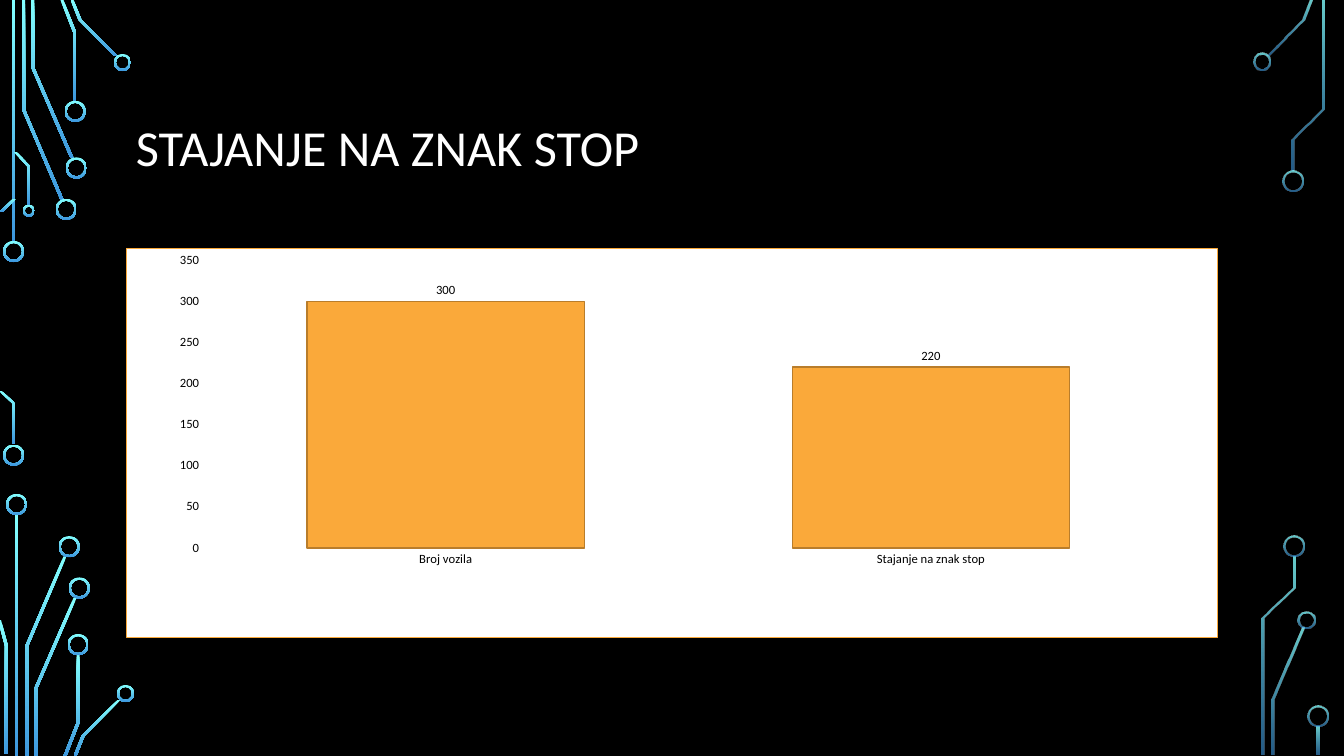
from math import hypot

from lxml.etree import SubElement
from pptx import Presentation
from pptx.chart.data import CategoryChartData
from pptx.dml.color import RGBColor
from pptx.enum.chart import XL_CHART_TYPE, XL_LABEL_POSITION, XL_TICK_MARK
from pptx.enum.shapes import MSO_SHAPE
from pptx.enum.text import MSO_ANCHOR, PP_ALIGN
from pptx.oxml import parse_xml
from pptx.oxml.ns import nsdecls, qn
from pptx.util import Inches, Pt

BLACK = RGBColor(0x00, 0x00, 0x00)
WHITE = RGBColor(0xFF, 0xFF, 0xFF)
CYAN = RGBColor(0x82, 0xFF, 0xFF)
BLUE = RGBColor(0x3D, 0x97, 0xDE)
ORANGE = RGBColor(0xFA, 0xA9, 0x3A)
BROWN = RGBColor(0xB9, 0x7D, 0x2B)
FONT = "Calibri"
SLIDE_HEIGHT = 7.5
TRACE_WIDTH = 0.03
RING_THICKNESS = 0.02
BIG, MEDIUM, SMALL, NO_RING = 0.21, 0.17, 0.12, 0

# Each trace is the diameter of its end ring and the points of its left edge.
TOP_LEFT_TRACES = [
    (BIG, [(0.12, 0), (0.12, 2.39)]),
    (BIG, [(0.22, 0), (0.22, 1.09), (0.6, 1.98)]),
    (BIG, [(0.31, 0), (0.31, 0.67), (0.7, 1.57)]),
    (BIG, [(0.6, 0), (0.73, 0.33), (0.73, 1)]),
    (MEDIUM, [(0.7, 0), (0.78, 0.2), (1.14, 0.56)]),
]
BOTTOM_LEFT_TRACES = [
    (diameter, [(x + 0.03, SLIDE_HEIGHT - y) for x, y in points])
    for diameter, points in TOP_LEFT_TRACES
]
LEFT_EDGE_TRACES = [
    (NO_RING, [(0, 2.1), (0.13, 1.97)]),
    (BIG, [(-0.01, 3.88), (0.12, 4), (0.12, 4.41)]),
    (SMALL, [(0.14, 1.51), (0.27, 1.65), (0.27, 2.03)]),
    (NO_RING, [(-0.02, 6.15), (0.05, 6.41), (0.05, 7.48)]),
]
RIGHT_TRACES = [
    (MEDIUM, [(12.99, 0), (12.91, 0.2), (12.56, 0.55)]),
    (BIG, [(13.11, 0), (13.11, 1.08), (12.81, 1.38), (12.81, 1.69)]),
    (MEDIUM, [(12.61, 7.49), (12.61, 6.94), (12.91, 6.23)]),
    (BIG, [(12.51, 7.49), (12.51, 6.13), (12.82, 5.83), (12.82, 5.52)]),
    (BIG, [(13.06, 7.49), (13.06, 7.21)]),
]
LEFT_TRACES = TOP_LEFT_TRACES + BOTTOM_LEFT_TRACES + LEFT_EDGE_TRACES


def paint_circuit(shape, opacities):
    """Fill with the cyan to blue gradient; opacities are top and bottom percent."""
    shape.shadow.inherit = False
    shape.line.fill.background()
    shape.fill.gradient()
    shape.fill.gradient_angle = 270
    for stop, color in zip(shape.fill.gradient_stops, (CYAN, BLUE)):
        stop.color.rgb = color
    for color_element, opacity in zip(shape._element.spPr.iter(qn("a:srgbClr")), opacities):
        if opacity < 100:
            SubElement(color_element, qn("a:alpha"), val=str(opacity * 1000))


def style_font(font, size, color):
    font.name = FONT
    font.size = Pt(size)
    font.color.rgb = color


presentation = Presentation()
presentation.slide_width = Inches(13.33)
presentation.slide_height = Inches(SLIDE_HEIGHT)
slide = presentation.slides.add_slide(presentation.slide_layouts[6])
slide.background.fill.solid()
slide.background.fill.fore_color.rgb = BLACK

for traces, opacities in ((LEFT_TRACES, (100, 100)), (RIGHT_TRACES, (80, 60))):
    for diameter, left_edge in traces:
        right_edge = [(x + TRACE_WIDTH, y) for x, y in reversed(left_edge)]
        outline = [(Inches(x), Inches(y)) for x, y in left_edge + right_edge]
        builder = slide.shapes.build_freeform(*outline[0])
        builder.add_line_segments(outline[1:], close=True)
        paint_circuit(builder.convert_to_shape(), opacities)
        if diameter == NO_RING:
            continue

        # The ring continues the last segment of its trace.
        (previous_x, previous_y), (end_x, end_y) = left_edge[-2:]
        run, rise = end_x - previous_x, end_y - previous_y
        radius = diameter / 2
        reach = radius / hypot(run, rise)
        left = end_x + TRACE_WIDTH / 2 + run * reach - radius
        top = end_y + rise * reach - radius
        ring = slide.shapes.add_shape(
            MSO_SHAPE.DONUT, Inches(left), Inches(top), Inches(diameter), Inches(diameter))
        ring.adjustments[0] = RING_THICKNESS / diameter
        paint_circuit(ring, opacities)

title = slide.shapes.add_textbox(Inches(1.25), Inches(0.68), Inches(10.83), Inches(1.62))
title.text_frame.word_wrap = True
title.text_frame.vertical_anchor = MSO_ANCHOR.MIDDLE
title.text_frame.text = "STAJANJE NA ZNAK STOP"
paragraph = title.text_frame.paragraphs[0]
paragraph.alignment = PP_ALIGN.LEFT
paragraph.line_spacing = 0.9
style_font(paragraph.runs[0].font, 36, WHITE)

chart_data = CategoryChartData()
chart_data.categories = ["Broj vozila", "Stajanje na znak stop"]
chart_data.add_series("Series 1", (300, 220))
chart = slide.shapes.add_chart(
    XL_CHART_TYPE.COLUMN_CLUSTERED,
    Inches(1.25), Inches(2.46), Inches(10.83), Inches(3.87), chart_data).chart
chart.has_title = False
chart.has_legend = False
style_font(chart.font, 10, BLACK)

for axis in (chart.category_axis, chart.value_axis):
    axis.major_tick_mark = XL_TICK_MARK.NONE
    axis.minor_tick_mark = XL_TICK_MARK.NONE
    axis.has_major_gridlines = False
    style_font(axis.tick_labels.font, 9, BLACK)
chart.category_axis.format.line.color.rgb = WHITE
chart.category_axis.format.line.width = Pt(0.75)
chart.value_axis.format.line.fill.background()
chart.value_axis.minimum_scale = 0
chart.value_axis.maximum_scale = 350
chart.value_axis.major_unit = 50

plot = chart.plots[0]
plot.gap_width = 75
plot.vary_by_categories = False
plot.has_data_labels = True
labels = plot.data_labels
labels.show_value = True
labels.position = XL_LABEL_POSITION.OUTSIDE_END
style_font(labels.font, 9, BLACK)
columns = plot.series[0].format
columns.fill.solid()
columns.fill.fore_color.rgb = ORANGE
columns.line.color.rgb = BROWN
columns.line.width = Pt(1)

chart_element = chart._chartSpace.find(qn("c:chart"))
chart_element.addnext(parse_xml(
    f'<c:spPr {nsdecls("c", "a")}>'
    f'<a:solidFill><a:srgbClr val="{WHITE}"/></a:solidFill>'
    f'<a:ln w="{Pt(1)}"><a:solidFill><a:srgbClr val="{ORANGE}"/></a:solidFill></a:ln>'
    '</c:spPr>'))
plot_area = chart_element.find(qn("c:plotArea"))
for layout in plot_area.findall(qn("c:layout")):
    plot_area.remove(layout)
layout = parse_xml(f'<c:layout {nsdecls("c")}><c:manualLayout/></c:layout>')
settings = [("layoutTarget", "inner"), ("xMode", "edge"), ("yMode", "edge"),
            ("x", "0.07"), ("y", "0.03"), ("w", "0.89"), ("h", "0.74")]
for name, value in settings:
    SubElement(layout[0], qn(f"c:{name}"), val=value)
plot_area.insert(0, layout)

presentation.save("out.pptx")
